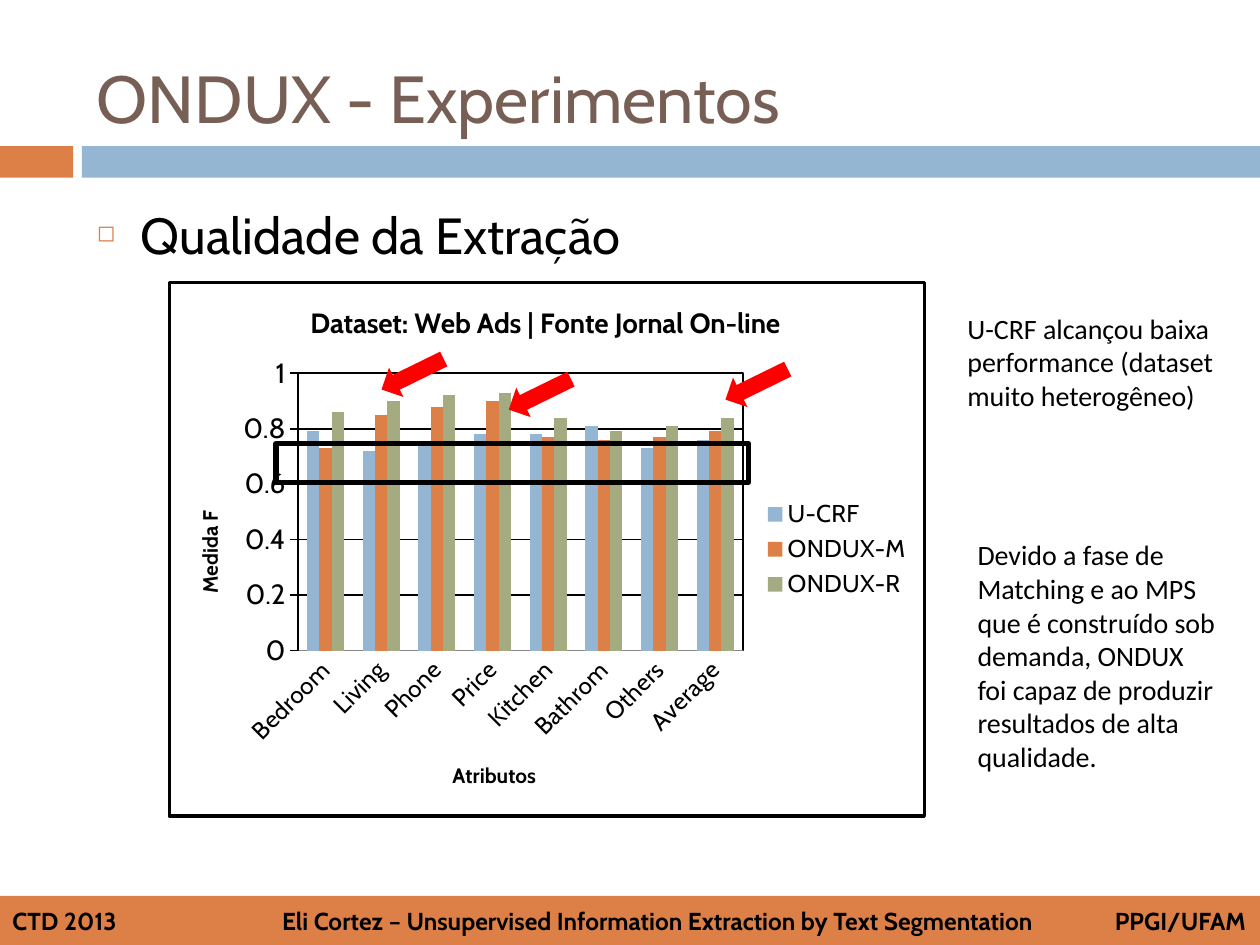
import pptx
import pptx.chart.data
import pptx.dml.color
import pptx.enum.chart
import pptx.enum.shapes
import pptx.enum.text
import pptx.oxml
import pptx.oxml.ns
import pptx.util

Inches, Pt = pptx.util.Inches, pptx.util.Pt
ANCHOR = pptx.enum.text.MSO_ANCHOR
SHAPE = pptx.enum.shapes.MSO_SHAPE
CHART = pptx.enum.chart

ORANGE, BLUE, GREEN = "DD8047", "94B6D2", "A5AB81"
BROWN, BLACK, RED = "775F55", "000000", "FF0000"

TITLE = "ONDUX - Experimentos"
TOPIC = "Qualidade da Extração"
FOOTER = ["CTD 2013",
          "Eli Cortez – Unsupervised Information Extraction by Text Segmentation",
          "PPGI/UFAM"]
FOOTER_TABS = [2.14, 8.75]
NOTES = [
    ("U-CRF alcançou baixa performance (dataset muito heterogêneo)",
     (7.58, 2.42, 2.19, 0.91)),
    ("Devido a fase de Matching e ao MPS que é construído sob demanda, "
     "ONDUX foi capaz de produzir resultados de alta qualidade.",
     (7.66, 4.22, 2.11, 1.99)),
]
CHART_TITLE = "Dataset: Web Ads | Fonte Jornal On-line"
ATTRIBUTES = ["Bedroom", "Living", "Phone", "Price",
              "Kitchen", "Bathrom", "Others", "Average"]
METHODS = [
    ("U-CRF", BLUE, [0.79, 0.72, 0.75, 0.78, 0.78, 0.81, 0.73, 0.76]),
    ("ONDUX-M", ORANGE, [0.73, 0.85, 0.88, 0.9, 0.77, 0.76, 0.77, 0.79]),
    ("ONDUX-R", GREEN, [0.86, 0.9, 0.92, 0.93, 0.84, 0.79, 0.81, 0.84]),
]
ARROWS = [(5.73, 2.92), (4.01, 3), (3, 2.84)]


def rgb(color):
    return pptx.dml.color.RGBColor.from_string(color)


def xml(tag, inner="", attributes=""):
    """Element of the drawing (a:) or chart (c:) namespace."""
    spaces = pptx.oxml.ns.nsdecls("a", "c")
    return pptx.oxml.parse_xml(f"<{tag} {spaces} {attributes}>{inner}</{tag}>")


def style(font, size, color=BLACK, name="Cabin", bold=False):
    font.size, font.name, font.bold = Pt(size), name, bold
    font.color.rgb = rgb(color)


def write(frame, text, anchor=ANCHOR.TOP, **font):
    frame.word_wrap = True
    frame.vertical_anchor = anchor
    paragraph = frame.paragraphs[0]
    paragraph.alignment = pptx.enum.text.PP_ALIGN.LEFT
    run = paragraph.add_run()
    run.text = text
    style(run.font, **font)
    return paragraph


def add_text(slide, text, box, **font):
    frame = slide.shapes.add_textbox(*map(Inches, box)).text_frame
    return write(frame, text, **font)


def add_block(slide, kind, box, fill=None, line=None, width=3):
    block = slide.shapes.add_shape(kind, *map(Inches, box))
    block.shadow.inherit = False
    if fill:
        block.fill.solid()
        block.fill.fore_color.rgb = rgb(fill)
    else:
        block.fill.background()
    if line:
        block.line.color.rgb = rgb(line)
        block.line.width = Pt(width)
    else:
        block.line.fill.background()
    return block


def add_bullet(paragraph):
    properties = paragraph._p.get_or_add_pPr()
    properties.set("marL", str(Inches(0.35)))
    properties.set("indent", str(-Inches(0.35)))
    properties.append(xml("a:buClr", f'<a:srgbClr val="{ORANGE}"/>'))
    properties.append(xml("a:buSzPct", attributes='val="45000"'))
    properties.append(xml("a:buChar", attributes='char="◻"'))


def add_tabs(paragraph, positions):
    stops = "".join(f'<a:tab pos="{Inches(at)}" algn="l"/>' for at in positions)
    paragraph._p.get_or_add_pPr().append(xml("a:tabLst", stops))


def place(element, index, **fractions):
    """Put a chart part at fractions of the chart's size."""
    for old in element.findall(pptx.oxml.ns.qn("c:layout")):
        element.remove(old)
    inner = '<c:layoutTarget val="inner"/>' if "w" in fractions else ""
    inner += '<c:xMode val="edge"/><c:yMode val="edge"/>'
    inner += "".join(f'<c:{key} val="{value}"/>' for key, value in fractions.items())
    element.insert(index, xml("c:layout", f"<c:manualLayout>{inner}</c:manualLayout>"))


def outline(width):
    return xml("c:spPr", f'<a:noFill/><a:ln w="{Pt(width)}"><a:solidFill>'
               f'<a:srgbClr val="{BLACK}"/></a:solidFill></a:ln>')


def add_heading(owner, text, size, x, y):
    """Title of the chart or of an axis."""
    title = owner.chart_title if hasattr(owner, "chart_title") else owner.axis_title
    run = title.text_frame.paragraphs[0].add_run()
    run.text = text
    style(run.font, size, bold=True)
    place(title._element, 1, x=x, y=y)


def add_results(slide):
    data = pptx.chart.data.CategoryChartData()
    data.categories = ATTRIBUTES
    for name, _, values in METHODS:
        data.add_series(name, values)
    chart = slide.shapes.add_chart(
        CHART.XL_CHART_TYPE.COLUMN_CLUSTERED,
        *map(Inches, (1.33, 2.23, 6.02, 4.26)), data).chart
    style(chart.font, 10)
    chart._chartSpace.chart.addnext(outline(2))

    plot = chart.plots[0]
    plot.gap_width, plot.overlap, plot.vary_by_categories = 150, 0, False
    for series, (_, color, _) in zip(plot.series, METHODS):
        series.format.fill.solid()
        series.format.fill.fore_color.rgb = rgb(color)
    area = chart._chartSpace.chart.plotArea
    place(area, 0, x=0.17, y=0.17, w=0.59, h=0.52)
    area.append(outline(1))

    attributes, scores = chart.category_axis, chart.value_axis
    attributes.major_tick_mark = CHART.XL_TICK_MARK.NONE
    attributes.format.line.color.rgb = rgb("878787")
    style(attributes.tick_labels.font, 14)
    attributes._element.txPr.bodyPr.set("rot", str(-45 * 60000))
    scores.minimum_scale, scores.maximum_scale, scores.major_unit = 0, 1, 0.2
    scores.major_tick_mark = CHART.XL_TICK_MARK.OUTSIDE
    style(scores.tick_labels.font, 16)
    for line in (scores.format.line, scores.major_gridlines.format.line):
        line.color.rgb = rgb(BLACK)
        line.width = Pt(1)

    add_heading(chart, CHART_TITLE, 16, 0.18, 0.03)
    add_heading(attributes, "Atributos", 12, 0.37, 0.89)
    add_heading(scores, "Medida F", 12, 0.03, 0.42)
    chart.has_legend = True
    chart.legend.position = CHART.XL_LEGEND_POSITION.RIGHT
    chart.legend.include_in_layout = False
    style(chart.legend.font, 14)


def main():
    deck = pptx.Presentation()
    deck.slide_width, deck.slide_height = Inches(10), Inches(7.5)
    slide = deck.slides.add_slide(deck.slide_layouts[6])

    add_block(slide, SHAPE.RECTANGLE, (0, 1.16, 0.58, 0.25), ORANGE)
    add_block(slide, SHAPE.RECTANGLE, (0.65, 1.16, 9.35, 0.25), BLUE)
    footer = add_block(slide, SHAPE.RECTANGLE, (0, 7.11, 10, 0.4), ORANGE)
    add_tabs(write(footer.text_frame, "\t".join(FOOTER), ANCHOR.MIDDLE,
                   size=14, bold=True), FOOTER_TABS)

    add_text(slide, TITLE, (0.67, 0.23, 8.92, 1.08), anchor=ANCHOR.MIDDLE,
             size=38, color=BROWN)
    topic = add_text(slide, TOPIC, (0.67, 1.57, 8.92, 4.92), size=29)
    topic.space_before = Pt(7)
    add_bullet(topic)

    add_results(slide)
    for note, box in NOTES:
        add_text(slide, note, box, size=16, name="Calibri")
    add_block(slide, SHAPE.RECTANGLE, (2.19, 3.52, 3.75, 0.31), line=BLACK)
    for left, top in ARROWS:
        arrow = add_block(slide, SHAPE.RIGHT_ARROW, (left, top, 0.55, 0.26), RED)
        arrow.rotation = 153.9
    deck.save("out.pptx")


if __name__ == "__main__":
    main()
